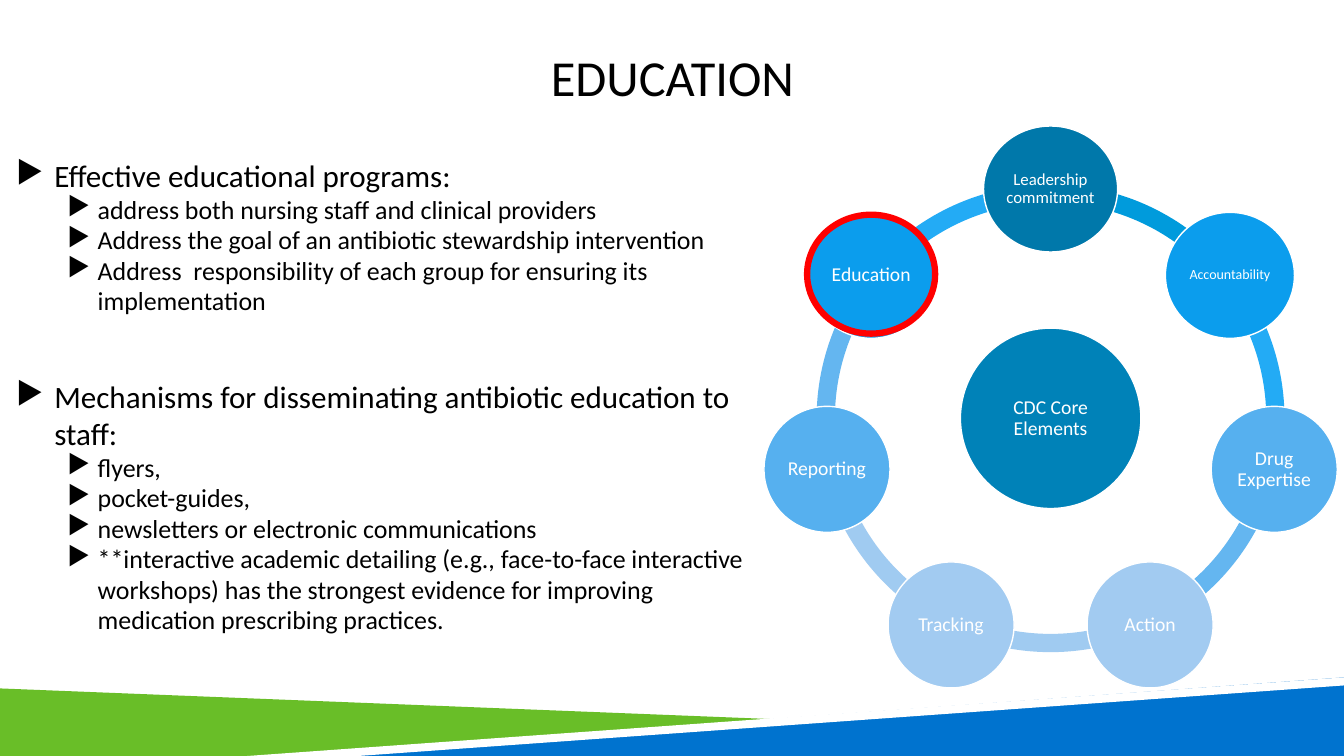
import math
from dataclasses import dataclass

import pptx
import pptx.dml.color
import pptx.enum.shapes
import pptx.enum.text
import pptx.util
from lxml import etree
from pptx.util import Inches

FONT = "Calibri"
BLACK, WHITE, RED = "000000", "FFFFFF", "FF0000"
SHAPES = pptx.enum.shapes.MSO_SHAPE
ALIGN = pptx.enum.text.PP_ALIGN
ANCHOR = pptx.enum.text.MSO_ANCHOR

RING_X, RING_Y = 10.42, 4.15
RING_SIZE = 4.64
ORBIT = 2.275


@dataclass
class Element:
    """A circle on the ring and the arc that leads on from it."""
    label: str
    fill: str
    arc_fill: str
    width: float = 1.25
    size: float = 14


@dataclass
class Topic:
    heading: str
    points: list[str]
    space_before: float = 0


@dataclass
class Band:
    fill: str
    points: list[tuple[float, float]]


ELEMENTS = [
    Element("Leadership commitment", "0078AA", "009BDC", 1.33, 12),
    Element("Accountability", "0B9DED", "23ABF5", 1.28, 10),
    Element("Drug Expertise", "56B0EF", "64B6F0"),
    Element("Action", "A2CBF1", "A0CBF1"),
    Element("Tracking", "A2CBF1", "A0CBF1"),
    Element("Reporting", "56B0EF", "64B6F0"),
    Element("Education", "0B9DED", "23ABF5"),
]

TOPICS = [
    Topic("Effective educational programs:", [
        "address both nursing staff and clinical providers",
        "Address the goal of an antibiotic stewardship intervention",
        "Address  responsibility of each group for ensuring its implementation",
    ]),
    Topic("Mechanisms for disseminating antibiotic education to staff:", [
        "flyers,",
        "pocket-guides,",
        "newsletters or electronic communications",
        "**interactive academic detailing (e.g., face-to-face interactive workshops) "
        "has the strongest evidence for improving medication prescribing practices.",
    ], 45),
]

BANDS = [
    Band("69BE28", [(0, 6.83), (10.56, 7.25), (2.67, 7.5), (0, 7.5)]),
    Band("0073CF", [(2.64, 7.5), (13.33, 6.72), (13.33, 7.5)]),
    Band(WHITE, [(13.33, 6.72), (2.45, 7.5), (3.55, 7.5), (13.33, 6.8)]),
]


def rgb(value: str) -> pptx.dml.color.RGBColor:
    return pptx.dml.color.RGBColor.from_string(value)


def paint(shape, fill: str | None, line: str | None = None, weight: float = 1) -> None:
    shape.shadow.inherit = False
    if fill:
        shape.fill.solid()
        shape.fill.fore_color.rgb = rgb(fill)
    else:
        shape.fill.background()
    if line:
        shape.line.color.rgb = rgb(line)
        shape.line.width = pptx.util.Pt(weight)
    else:
        shape.line.fill.background()


def add_run(paragraph, text: str, size: float, color: str) -> None:
    run = paragraph.add_run()
    run.text = text
    run.font.name = FONT
    run.font.size = pptx.util.Pt(size)
    run.font.color.rgb = rgb(color)


def set_margins(frame, side: float, top: float) -> None:
    frame.word_wrap = True
    frame.margin_left = frame.margin_right = Inches(side)
    frame.margin_top = frame.margin_bottom = Inches(top)


def add_frame(slide, left: float, top: float, width: float, height: float):
    box = slide.shapes.add_textbox(
        Inches(left), Inches(top), Inches(width), Inches(height))
    set_margins(box.text_frame, 0, 0.05)
    return box.text_frame


def add_band(slide, band: Band) -> None:
    first, *rest = [(Inches(x), Inches(y)) for x, y in band.points]
    builder = slide.shapes.build_freeform(*first)
    builder.add_line_segments(rest, close=True)
    paint(builder.convert_to_shape(), band.fill)


def add_centered(slide, kind, x: float, y: float, width: float, height: float):
    return slide.shapes.add_shape(
        kind, Inches(x - width / 2), Inches(y - height / 2),
        Inches(width), Inches(height))


def add_circle(slide, label: str, fill: str, x: float, y: float,
               width: float, height: float, size: float) -> None:
    circle = add_centered(slide, SHAPES.OVAL, x, y, width, height)
    paint(circle, fill, WHITE)
    frame = circle.text_frame
    set_margins(frame, 0.02, 0.02)
    frame.vertical_anchor = ANCHOR.MIDDLE
    paragraph = frame.paragraphs[0]
    paragraph.alignment = ALIGN.CENTER
    paragraph.line_spacing = 0.9
    add_run(paragraph, label, size, WHITE)


def add_ring(slide) -> None:
    step = 360 / len(ELEMENTS)
    for i, element in enumerate(ELEMENTS):
        arc = add_centered(slide, SHAPES.BLOCK_ARC, RING_X, RING_Y, RING_SIZE, RING_SIZE)
        # Angles are stored in 60000ths of a degree, adjustments in 100000ths.
        arc.adjustments[0] = (270 + i * step) % 360 * 0.6
        arc.adjustments[1] = (270 + (i + 1) * step) % 360 * 0.6
        arc.adjustments[2] = 0.039
        paint(arc, element.arc_fill)

    add_circle(slide, "CDC Core Elements", "0082B8", RING_X, RING_Y, 1.79, 1.79, 14)
    for i, element in enumerate(ELEMENTS):
        angle = math.radians(270 + i * step)
        add_circle(slide, element.label, element.fill,
                   RING_X + ORBIT * math.cos(angle), RING_Y + ORBIT * math.sin(angle),
                   element.width, 1.25, element.size)

    highlight = add_centered(slide, SHAPES.OVAL, 8.64, 2.72, 1.27, 1.18)
    paint(highlight, None, RED, 4.5)


def add_bullet(paragraph, indent: float, hanging: float) -> None:
    properties = paragraph._p.get_or_add_pPr()
    properties.set("marL", str(Inches(indent)))
    properties.set("indent", str(-Inches(hanging)))
    bullet = etree.SubElement(properties, pptx.oxml.ns.qn("a:buChar"))
    bullet.set("char", "▶")


def add_topics(slide) -> None:
    frame = add_frame(slide, 0.16, 1.52, 7.23, 5.04)
    paragraph = frame.paragraphs[0]
    for topic in TOPICS:
        if topic is not TOPICS[0]:
            paragraph = frame.add_paragraph()
            paragraph.space_before = pptx.util.Pt(topic.space_before)
        paragraph.line_spacing = 0.98
        add_bullet(paragraph, 0.38, 0.38)
        add_run(paragraph, topic.heading, 22.2, BLACK)
        for point in topic.points:
            paragraph = frame.add_paragraph()
            paragraph.level = 1
            paragraph.line_spacing = 0.98
            add_bullet(paragraph, 0.81, 0.3)
            add_run(paragraph, point, 18.5, BLACK)


def main() -> None:
    deck = pptx.Presentation()
    deck.slide_width, deck.slide_height = Inches(13.33), Inches(7.5)
    slide = deck.slides.add_slide(deck.slide_layouts[6])

    for band in BANDS:
        add_band(slide, band)

    title = add_frame(slide, 2.17, 0.13, 9, 1.25)
    title.vertical_anchor = ANCHOR.MIDDLE
    title.paragraphs[0].alignment = ALIGN.CENTER
    add_run(title.paragraphs[0], "EDUCATION", 36, BLACK)

    add_topics(slide)
    add_ring(slide)
    deck.save("out.pptx")


if __name__ == "__main__":
    main()
